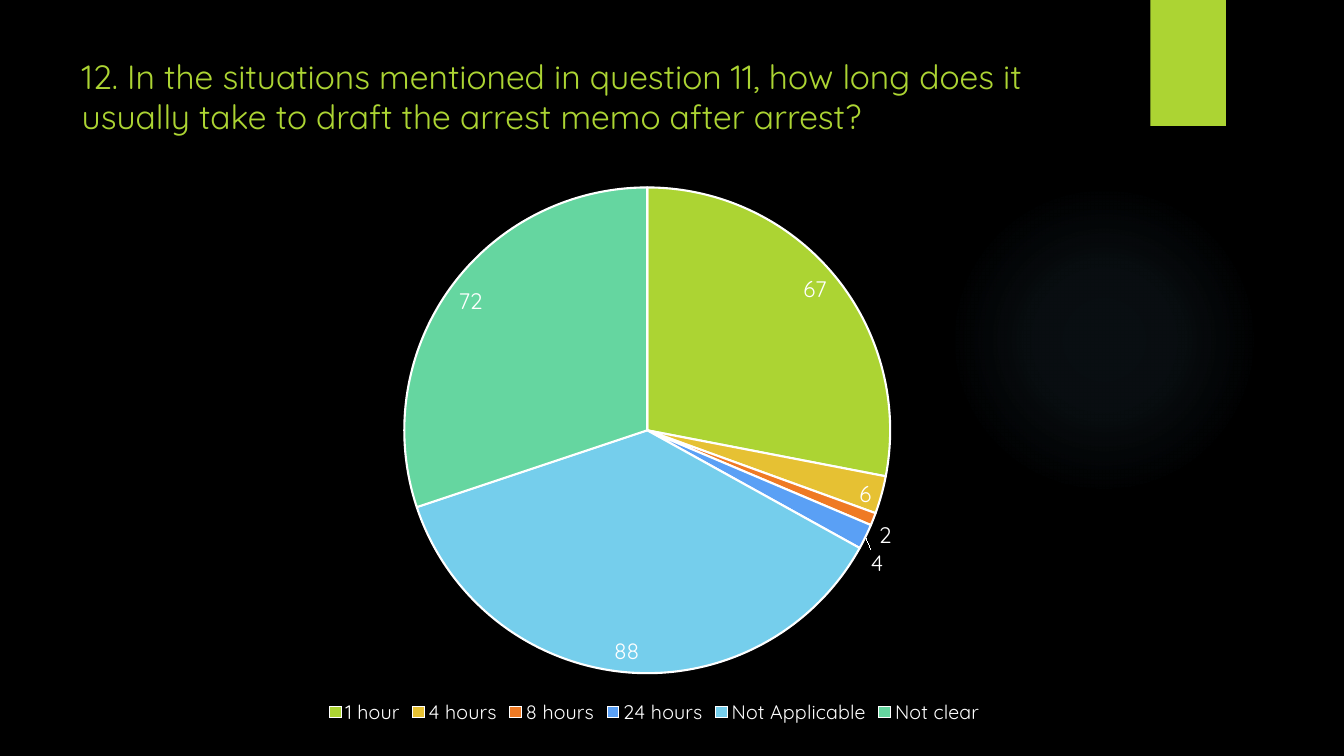
from lxml import etree
from pptx import Presentation, util as u
from pptx.chart.data import CategoryChartData
from pptx.dml.color import RGBColor
from pptx.enum import chart as ch, shapes, text
from pptx.oxml import parse_xml
from pptx.oxml.ns import nsdecls, qn

TITLE = ("12. In the situations mentioned in question 11, how long does it "
         "usually take to draft the arrest memo after arrest?")
FONT = "Quicksand"
BLACK = RGBColor(0x00, 0x00, 0x00)
WHITE = RGBColor(0xFF, 0xFF, 0xFF)
LIME = RGBColor(0xAC, 0xD4, 0x33)
GOLD = RGBColor(0xE6, 0xC1, 0x33)
ORANGE = RGBColor(0xEF, 0x7A, 0x24)
BLUE = RGBColor(0x5A, 0xA0, 0xF5)
SKY = RGBColor(0x75, 0xCE, 0xEC)
MINT = RGBColor(0x65, 0xD6, 0xA0)
GLOW = RGBColor(0x7A, 0xC4, 0xF0)

ANSWERS = [
    ("1 hour", 67, LIME),
    ("4 hours", 6, GOLD),
    ("8 hours", 2, ORANGE),
    ("24 hours", 4, BLUE),
    ("Not Applicable", 88, SKY),
    ("Not clear", 72, MINT),
]
GLOW_STOPS = [(0, 7), (36, 6), (69, 0), (100, 0)]
GLOW_BOX = (9.41, 1.83, 3.08, 3.08)
TAB_BOX = (11.41, 0, 0.75, 1.25)
TITLE_BOX = (0.71, 0.5, 10.29, 1.53)
CHART_BOX = (1.21, 1.73, 10.56, 5.5)
PIE_BOX = (4.01, 1.86, 4.82, 4.82)


def inches(box):
    return [u.Inches(v) for v in box]


def style(font, size, color):
    for name, value in {"name": FONT, "size": u.Pt(size), "bold": False}.items():
        setattr(font, name, value)
    font.color.rgb = color


def add_plain(s, kind, box, color):
    sp = s.shapes.add_shape(kind, *inches(box))
    sp.shadow.inherit = False
    sp.fill.solid()
    sp.fill.fore_color.rgb = color
    sp.line.fill.background()
    return sp


def add_glow(s):
    sp = add_plain(s, shapes.MSO_SHAPE.OVAL, GLOW_BOX, GLOW)
    stops = "".join(
        f'<a:gs pos="{pos * 1000}"><a:srgbClr val="{GLOW}">'
        f'<a:alpha val="{alpha * 1000}"/></a:srgbClr></a:gs>'
        for pos, alpha in GLOW_STOPS)
    gradient = parse_xml(
        f'<a:gradFill {nsdecls("a")}><a:gsLst>{stops}</a:gsLst><a:path path="circle">'
        '<a:fillToRect l="50000" t="50000" r="50000" b="50000"/></a:path></a:gradFill>')
    props = sp.fill._xPr
    props.replace(props.find(qn("a:solidFill")), gradient)


def place_pie(chart):
    left, top, width, height = CHART_BOX
    x, y, w, h = PIE_BOX
    values = {"x": (x - left) / width, "y": (y - top) / height,
              "w": w / width, "h": h / height}
    area = chart._chartSpace.find(".//" + qn("c:plotArea"))
    layout = area.find(qn("c:layout"))
    if layout is None:
        layout = etree.Element(qn("c:layout"))
        area.insert(0, layout)
    manual = etree.SubElement(layout, qn("c:manualLayout"))
    settings = {"layoutTarget": "inner", "xMode": "edge", "yMode": "edge", **values}
    for tag, value in settings.items():
        val = value if isinstance(value, str) else f"{value:.4f}"
        etree.SubElement(manual, qn(f"c:{tag}"), val=val)


def add_pie(s):
    data = CategoryChartData()
    data.categories = [name for name, _, _ in ANSWERS]
    data.add_series("Series 1", [count for _, count, _ in ANSWERS])
    chart = s.shapes.add_chart(ch.XL_CHART_TYPE.PIE, *inches(CHART_BOX), data).chart
    chart.has_title = False
    style(chart.font, 10, WHITE)
    chart.has_legend = True
    chart.legend.position = ch.XL_LEGEND_POSITION.BOTTOM
    chart.legend.include_in_layout = False
    style(chart.legend.font, 14, WHITE)
    plot = chart.plots[0]
    plot.vary_by_categories = True
    for i, (_, _, color) in enumerate(ANSWERS):
        part = plot.series[0].points[i].format
        part.fill.solid()
        part.fill.fore_color.rgb = color
        part.line.color.rgb = WHITE
        part.line.width = u.Pt(1.5)
    labels = plot.series[0].data_labels
    labels.show_value = True
    labels.position = ch.XL_LABEL_POSITION.BEST_FIT
    style(labels.font, 16, WHITE)
    place_pie(chart)


def add_title(s):
    sp = s.shapes.title
    sp.left, sp.top, sp.width, sp.height = inches(TITLE_BOX)
    tf = sp.text_frame
    for name, value in {"text": TITLE, "word_wrap": True,
                        "vertical_anchor": text.MSO_ANCHOR.TOP,
                        "auto_size": text.MSO_AUTO_SIZE.NONE}.items():
        setattr(tf, name, value)
    p = tf.paragraphs[0]
    p.alignment = text.PP_ALIGN.LEFT
    style(p.runs[0].font, 24, LIME)


def main():
    prs = Presentation()
    prs.slide_width, prs.slide_height = inches((13.33, 7.5))
    s = prs.slides.add_slide(prs.slide_layouts[5])
    s.background.fill.solid()
    s.background.fill.fore_color.rgb = BLACK
    add_glow(s)
    add_plain(s, shapes.MSO_SHAPE.RECTANGLE, TAB_BOX, LIME)
    add_title(s)
    add_pie(s)
    prs.save("out.pptx")


if __name__ == "__main__":
    main()
